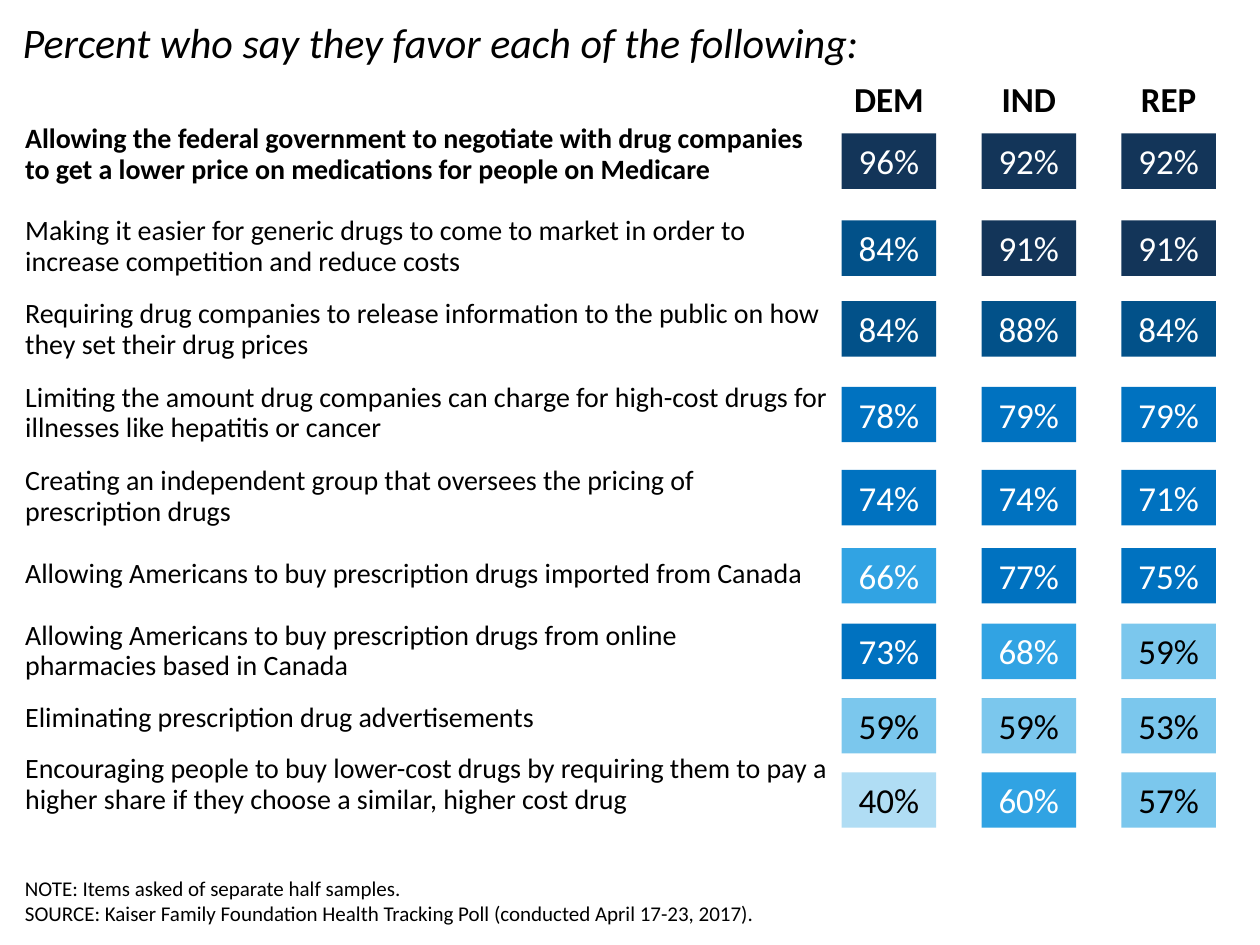
from dataclasses import dataclass

from pptx import Presentation
from pptx.dml.color import RGBColor
from pptx.enum.shapes import MSO_SHAPE
from pptx.enum.text import MSO_ANCHOR, MSO_AUTO_SIZE, PP_ALIGN
from pptx.util import Inches, Pt

RECT = MSO_SHAPE.RECTANGLE
TOP, MIDDLE, BOTTOM = MSO_ANCHOR.TOP, MSO_ANCHOR.MIDDLE, MSO_ANCHOR.BOTTOM
LEFT, CENTER = PP_ALIGN.LEFT, PP_ALIGN.CENTER
NO_FIT = MSO_AUTO_SIZE.NONE


@dataclass(frozen=True)
class Theme:
    font: str = "Calibri"
    black: str = "000000"
    white: str = "FFFFFF"
    scale: tuple = (
        (90, "133559"),
        (80, "025189"),
        (70, "0072C0"),
        (60, "31A3E3"),
        (50, "7BC7ED"),
        (0, "B0DDF4"),
    )
    white_text_from: int = 60
    title_size: int = 24
    value_size: int = 20
    label_size: int = 16
    note_size: int = 12


class SlideBuilder:
    def __init__(self, slide, theme):
        self.s = slide
        self.theme = theme

    def set_text(self, tf, text, size, color=None, align=LEFT, bold=False, italic=False, spacing=1.0):
        tf.text = text
        for p in tf.paragraphs:
            p.alignment = align
            p.line_spacing = spacing
            p.font.name = self.theme.font
            p.font.size = Pt(size)
            p.font.bold = bold
            p.font.italic = italic
            p.font.color.rgb = RGBColor.from_string(color or self.theme.black)

    def title(self, text, left, top, width, height):
        sp = self.s.shapes.title
        sp.left, sp.top, sp.width, sp.height = map(Inches, (left, top, width, height))
        tf = sp.text_frame
        tf.word_wrap = True
        tf.auto_size = NO_FIT
        tf.vertical_anchor = TOP
        self.set_text(tf, text, self.theme.title_size, italic=True)

    def text(self, text, left, top, width, height):
        sp = self.s.shapes.add_textbox(*map(Inches, (left, top, width, height)))
        tf = sp.text_frame
        tf.word_wrap = True
        tf.vertical_anchor = BOTTOM
        self.set_text(tf, text, self.theme.note_size)

    def table(self, left, top, widths, heights):
        frame = self.s.shapes.add_table(
            len(heights), len(widths),
            *map(Inches, (left, top, sum(widths), sum(heights))),
        )
        table = frame.table
        table.first_row = False
        table.horz_banding = False
        for column, width in zip(table.columns, widths):
            column.width = Inches(width)
        for row, height in zip(table.rows, heights):
            row.height = Inches(height)
        for cell in table.iter_cells():
            cell.fill.background()
        return table

    def labels(self, rows, left, top, width):
        table = self.table(left, top, [width], [row[1] for row in rows])
        for i, (cell, row) in enumerate(zip(table.iter_cells(), rows)):
            cell.vertical_anchor = MIDDLE
            cell.margin_left = cell.margin_right = Inches(0.05)
            self.set_text(cell.text_frame, row[0], self.theme.label_size, bold=i == 0, spacing=0.9)

    def header(self, names, left, top, width, height):
        table = self.table(left, top, [width] * len(names), [height])
        for cell, name in zip(table.iter_cells(), names):
            self.set_text(cell.text_frame, name, self.theme.value_size, align=CENTER, bold=True)

    def value(self, percent, left, top, width, height):
        theme = self.theme
        sp = self.s.shapes.add_shape(RECT, *map(Inches, (left, top, width, height)))
        sp.shadow.inherit = False
        fill = next(color for floor, color in theme.scale if percent >= floor)
        sp.fill.solid()
        sp.fill.fore_color.rgb = RGBColor.from_string(fill)
        sp.line.fill.background()
        tf = sp.text_frame
        tf.word_wrap = True
        tf.vertical_anchor = TOP
        color = theme.white if percent >= theme.white_text_from else theme.black
        self.set_text(tf, f"{percent}%", theme.value_size, color, CENTER)


PARTIES = ["DEM", "IND", "REP"]
POLICIES = [
    ("Allowing the federal government to negotiate with drug companies\n"
     "to get a lower price on medications for people on Medicare",
     0.8, 1.06, (96, 92, 92)),
    ("Making it easier for generic drugs to come to market in order to "
     "increase competition and reduce costs",
     0.66, 1.75, (84, 91, 91)),
    ("Requiring drug companies to release information to the public on how "
     "they set their drug prices",
     0.66, 2.39, (84, 88, 84)),
    ("Limiting the amount drug companies can charge for high-cost drugs for "
     "illnesses like hepatitis or cancer",
     0.66, 3.07, (78, 79, 79)),
    ("Creating an independent group that oversees the pricing of\n"
     "prescription drugs",
     0.66, 3.73, (74, 74, 71)),
    ("Allowing Americans to buy prescription drugs imported from Canada",
     0.57, 4.35, (66, 77, 75)),
    ("Allowing Americans to buy prescription drugs from online \v"
     "pharmacies based in Canada",
     0.66, 4.95, (73, 68, 59)),
    ("Eliminating prescription drug advertisements",
     0.4, 5.54, (59, 59, 53)),
    ("Encouraging people to buy lower-cost drugs by requiring them to pay a "
     "higher share if they choose a similar, higher cost drug",
     0.66, 6.13, (40, 60, 57)),
]
NOTE = (
    "NOTE: Items asked of separate half samples.\n"
    "SOURCE: Kaiser Family Foundation Health Tracking Poll (conducted April 17-23, 2017)."
)
PITCH = 1.11


def main():
    prs = Presentation()
    prs.slide_width, prs.slide_height = Inches(10), Inches(7.5)
    slide = prs.slides.add_slide(prs.slide_layouts[5])
    builder = SlideBuilder(slide, Theme())

    builder.title("Percent who say they favor each of the following:", 0.08, 0.08, 9.69, 0.5)
    builder.text(NOTE, 0.1, 6.8, 9.1, 0.6)
    builder.labels(POLICIES, 0.15, 0.83, 6.6)
    builder.header(PARTIES, 6.5, 0.58, PITCH, 0.41)
    for _, _, top, percents in POLICIES:
        for i, percent in enumerate(percents):
            builder.value(percent, 6.68 + i * PITCH, top, 0.75, 0.44)

    prs.save("out.pptx")


if __name__ == "__main__":
    main()
